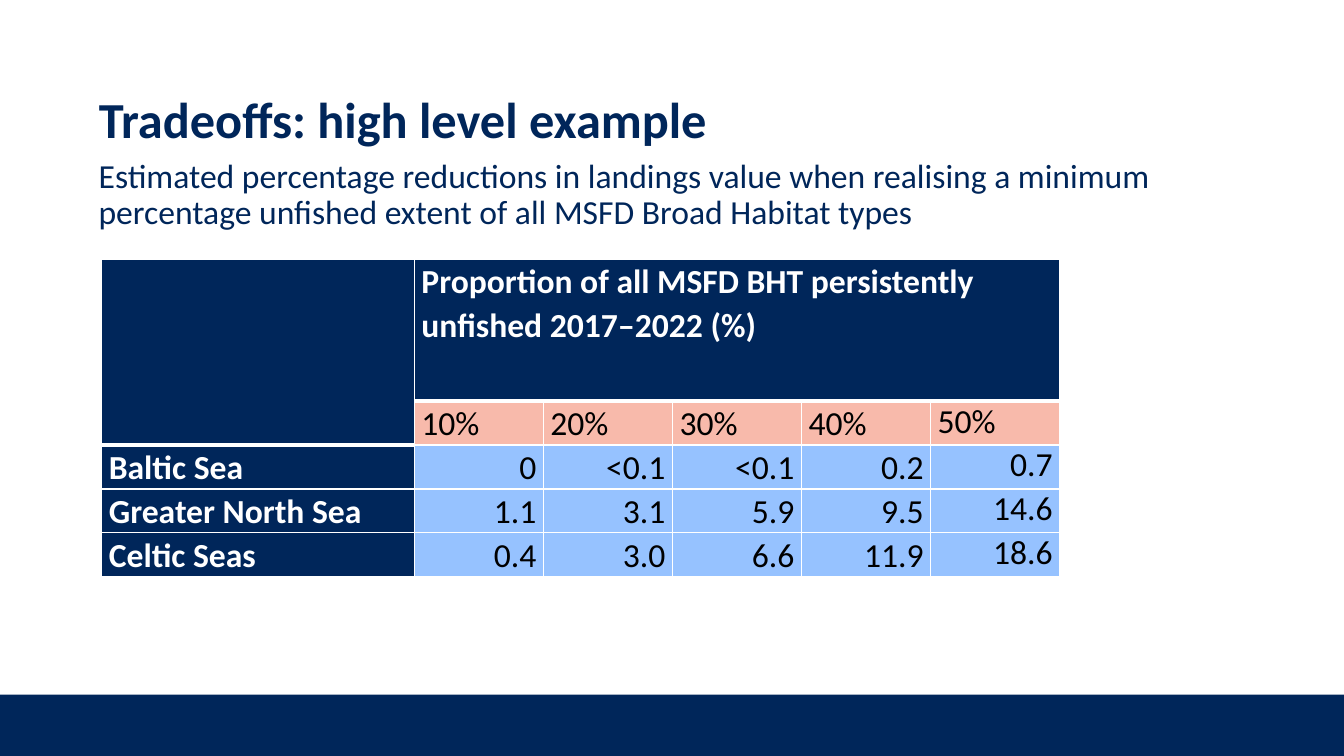
from dataclasses import dataclass

from lxml import etree
from pptx import Presentation
from pptx.dml.color import RGBColor
from pptx.enum.shapes import MSO_SHAPE
from pptx.enum.text import MSO_ANCHOR, MSO_AUTO_SIZE, PP_ALIGN
from pptx.oxml.ns import qn
from pptx.util import Inches, Pt

RECTANGLE = MSO_SHAPE.RECTANGLE
MIDDLE = MSO_ANCHOR.MIDDLE
NO_AUTOFIT = MSO_AUTO_SIZE.NONE
LEFT, RIGHT = PP_ALIGN.LEFT, PP_ALIGN.RIGHT

HEADING = "Tradeoffs: high level example"
SUBHEADING = (
    "Estimated percentage reductions in landings value when realising a minimum "
    "percentage unfished extent of all MSFD Broad Habitat types"
)
TABLE_HEADER = "Proportion of all MSFD BHT persistently unfished 2017‒2022 (%)"
PROPORTIONS = ["10%", "20%", "30%", "40%", "50%"]
REDUCTIONS = {
    "Baltic Sea": ["0", "<0.1", "<0.1", "0.2", "0.7"],
    "Greater North Sea": ["1.1", "3.1", "5.9", "9.5", "14.6"],
    "Celtic Seas": ["0.4", "3.0", "6.6", "11.9", "18.6"],
}


@dataclass(frozen=True)
class Theme:
    font: str = "Calibri"
    heading_size: int = 36
    text_size: int = 24
    navy: str = "00265A"
    salmon: str = "F8BAAB"
    blue: str = "96C2FF"
    white: str = "FFFFFF"
    black: str = "000000"


THEME = Theme()

SLIDE_WIDTH, SLIDE_HEIGHT = 13.33, 7.5
FOOTER_HEIGHT = 0.61
TABLE_LEFT, TABLE_TOP = 1.01, 2.57
LABEL_WIDTH, VALUE_WIDTH = 3.1, 1.28
HEADER_HEIGHT, ROW_HEIGHT = 1.41, 0.43
THIN_LINE, THICK_LINE = 1, 3


def rgb(color):
    return RGBColor.from_string(color)


def format_paragraph(paragraph, color, size, bold=False, align=LEFT, spacing=1.0):
    paragraph.alignment = align
    paragraph.line_spacing = spacing
    font = paragraph.font
    font.name, font.size, font.bold = THEME.font, Pt(size), bold
    font.color.rgb = rgb(color)


def write_heading(shape, text, box, size, bold=False):
    shape.left, shape.top, shape.width, shape.height = map(Inches, box)
    frame = shape.text_frame
    frame.text = text
    frame.word_wrap = True
    frame.auto_size = NO_AUTOFIT
    frame.vertical_anchor = MIDDLE
    format_paragraph(frame.paragraphs[0], THEME.navy, size, bold, spacing=0.9)


def style_cell(cell, fill, bottom=THIN_LINE, top=THIN_LINE):
    """Fill a cell and draw its four white borders, widths in points."""
    properties = cell._tc.get_or_add_tcPr()
    widths = {"lnL": THIN_LINE, "lnR": THIN_LINE, "lnT": top, "lnB": bottom}
    for side, width in widths.items():
        line = etree.SubElement(properties, qn(f"a:{side}"), w=str(Pt(width)))
        solid = etree.SubElement(line, qn("a:solidFill"))
        etree.SubElement(solid, qn("a:srgbClr"), val=THEME.white)
    cell.fill.solid()
    cell.fill.fore_color.rgb = rgb(fill)
    cell.margin_left = cell.margin_right = Inches(0.07)
    cell.margin_top = cell.margin_bottom = 0


def write_cell(cell, text, color, bold=False, align=LEFT, spacing=1.07):
    cell.text = text
    format_paragraph(
        cell.text_frame.paragraphs[0], color, THEME.text_size, bold, align, spacing
    )


def add_footer_band(slide):
    band = slide.shapes.add_shape(
        RECTANGLE, 0, Inches(SLIDE_HEIGHT - FOOTER_HEIGHT),
        Inches(SLIDE_WIDTH), Inches(FOOTER_HEIGHT),
    )
    band.shadow.inherit = False
    band.fill.solid()
    band.fill.fore_color.rgb = rgb(THEME.navy)
    band.line.fill.background()


def add_reductions_table(slide):
    body = [("", PROPORTIONS), *REDUCTIONS.items()]
    row_count, column_count = len(body) + 1, len(PROPORTIONS) + 1
    table = slide.shapes.add_table(
        row_count, column_count, Inches(TABLE_LEFT), Inches(TABLE_TOP),
        Inches(LABEL_WIDTH + VALUE_WIDTH * len(PROPORTIONS)),
        Inches(HEADER_HEIGHT + ROW_HEIGHT * len(body)),
    ).table
    for index, column in enumerate(table.columns):
        column.width = Inches(VALUE_WIDTH if index else LABEL_WIDTH)
    for index, row in enumerate(table.rows):
        row.height = Inches(ROW_HEIGHT if index else HEADER_HEIGHT)

    table.cell(0, 0).merge(table.cell(1, 0))
    table.cell(0, 1).merge(table.cell(0, column_count - 1))
    for column in range(column_count):
        style_cell(table.cell(0, column), THEME.navy, bottom=THICK_LINE)
    write_cell(table.cell(0, 1), TABLE_HEADER, THEME.white, bold=True)

    for row, (sea, values) in enumerate(body, start=1):
        is_proportions = row == 1
        label = table.cell(row, 0)
        style_cell(
            label, THEME.navy,
            bottom=THICK_LINE if is_proportions else THIN_LINE,
            top=THICK_LINE if row == 2 else THIN_LINE,
        )
        if sea:
            write_cell(label, sea, THEME.white, bold=True)
        for column, value in enumerate(values, start=1):
            cell = table.cell(row, column)
            style_cell(
                cell, THEME.salmon if is_proportions else THEME.blue,
                top=THICK_LINE if is_proportions else THIN_LINE,
            )
            write_cell(
                cell, value, THEME.black,
                align=LEFT if is_proportions else RIGHT,
                spacing=1.0 if column == len(values) else 1.07,
            )


def main():
    presentation = Presentation()
    presentation.slide_width = Inches(SLIDE_WIDTH)
    presentation.slide_height = Inches(SLIDE_HEIGHT)
    title_only = presentation.slide_layouts[5]
    slide = presentation.slides.add_slide(title_only)

    add_footer_band(slide)
    subheading = slide.shapes.add_textbox(0, 0, 0, 0)
    write_heading(subheading, SUBHEADING, (0.88, 1.36, 11.06, 1.16), THEME.text_size)
    add_reductions_table(slide)
    write_heading(
        slide.shapes.title, HEADING, (0.88, 0.63, 10.22, 1.16),
        THEME.heading_size, bold=True,
    )
    presentation.save("out.pptx")


if __name__ == "__main__":
    main()
